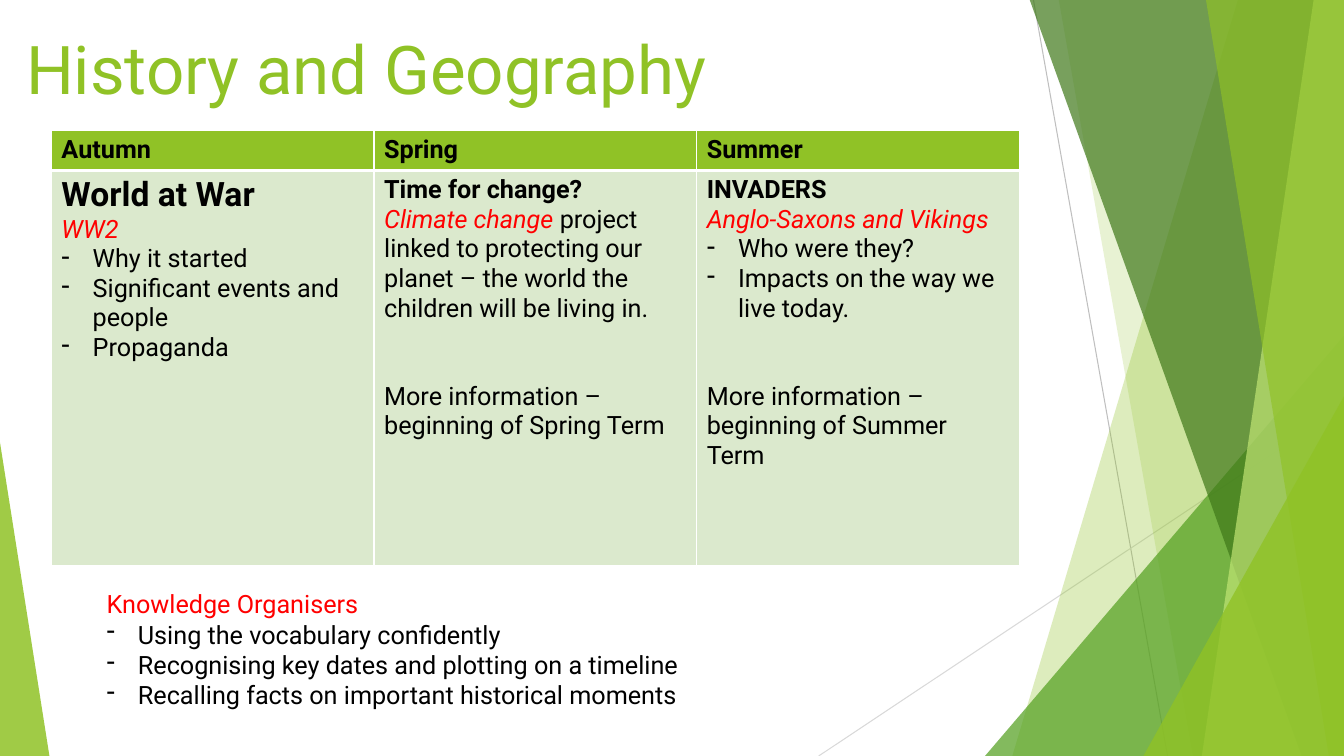
from lxml import etree
from pptx import Presentation
from pptx.dml.color import RGBColor
from pptx.enum.shapes import MSO_CONNECTOR as Connector, MSO_SHAPE as Preset
from pptx.oxml import parse_xml
from pptx.oxml.ns import nsdecls, qn
from pptx.util import Inches, Pt

GREEN = RGBColor(0x90, 0xC2, 0x26)
LEAF = RGBColor(0x54, 0xA0, 0x21)
FOREST = RGBColor(0x3F, 0x78, 0x19)
LIME = RGBColor(0xC0, 0xE4, 0x74)
PALE = RGBColor(0xDB, 0xE9, 0xCD)
GREY = RGBColor(0xBF, 0xBF, 0xBF)
LIGHT_GREY = RGBColor(0xD9, 0xD9, 0xD9)
RED = RGBColor(0xFF, 0x00, 0x00)
BLACK = RGBColor(0x00, 0x00, 0x00)
WIDTH, HEIGHT, TOP = 13.33, 7.5, -0.01


def add_text(frame, text, size=18, color=BLACK, bold=False, italic=False,
             dash=False, before=0, same_line=False):
    """Add a run of text, in a new paragraph unless same_line is set."""
    paragraph = frame.paragraphs[-1]
    if paragraph.runs and not same_line:
        paragraph = frame.add_paragraph()
    if before:
        paragraph.space_before = Pt(before)
    if dash:
        properties = paragraph._p.get_or_add_pPr()
        properties.set("marL", str(Inches(0.31)))
        properties.set("indent", str(-Inches(0.31)))
        etree.SubElement(properties, qn("a:buChar")).set("char", "-")
    run = paragraph.add_run()
    run.text = text
    font = run.font
    font.name, font.size, font.bold, font.italic = "Roboto", Pt(size), bold, italic
    font.color.rgb = color


def add_text_box(left, top, width, height):
    frame = slide.shapes.add_textbox(
        Inches(left), Inches(top), Inches(width), Inches(height)).text_frame
    frame.word_wrap = True
    return frame


presentation = Presentation()
presentation.slide_width, presentation.slide_height = Inches(WIDTH), Inches(HEIGHT)
slide = presentation.slides.add_slide(presentation.slide_layouts[6])

# Thin lines behind the facets
for start_x, start_y, end_x, color in [(10.25, 0, 11.58, GREY),
                                       (WIDTH, 4.03, 8.12, LIGHT_GREY)]:
    line = slide.shapes.add_connector(
        Connector.STRAIGHT, Inches(start_x), Inches(start_y), Inches(end_x), Inches(HEIGHT))
    line.line.color.rgb = color
    line.line.width = Pt(0.75)
    etree.SubElement(line._element.spPr, qn("a:effectLst"))

# Facets: ("band", top x, bottom x) reaches the right edge;
# ("triangle", left, top, width, apex) stands on the bottom edge
facets = [
    (("band", 12.28, 10.04), GREEN, 30),
    (("band", 10.5, 11.83), GREEN, 20),
    (("triangle", 9.77, 3.33, 3.56, 1), LEAF, 72),
    (("band", 10.21, 12.91), FOREST, 70),
    (("band", 13.03, 11.92), LIME, 70),
    (("band", 11.96, 13.18), GREEN, 65),
    (("triangle", 11.34, 3.93, 1.99, 1), GREEN, 80),
    (("triangle", 0, 4.39, 0.49, 0), GREEN, 85),
]
for (kind, *geometry), color, opacity in facets:
    if kind == "band":
        top_x, bottom_x = geometry
        builder = slide.shapes.build_freeform(Inches(top_x), Inches(TOP))
        corners = [(WIDTH, TOP), (WIDTH, HEIGHT), (bottom_x, HEIGHT)]
        builder.add_line_segments([(Inches(x), Inches(y)) for x, y in corners])
        shape = builder.convert_to_shape()
    else:
        left, top, width, apex = geometry
        shape = slide.shapes.add_shape(
            Preset.ISOSCELES_TRIANGLE, Inches(left), Inches(top),
            Inches(width), Inches(HEIGHT - top))
        shape.adjustments[0] = apex
    shape.shadow.inherit = False
    shape.line.fill.background()
    shape.fill.solid()
    shape.fill.fore_color.rgb = color
    color_element = shape._element.spPr.find(qn("a:solidFill"))[0]
    etree.SubElement(color_element, qn("a:alpha")).set("val", str(opacity * 1000))

# Title
add_text(add_text_box(0.16, 0.22, 9.4, 1.44), "History and Geography", size=48, color=GREEN)

# Term table: each entry is a text and its format
topic = dict(color=RED, italic=True)
point = dict(dash=True)
terms = {
    "Autumn": [
        ("World at War", dict(size=24, bold=True)),
        ("WW2", topic),
        ("Why it started", point),
        ("Significant events and people", point),
        ("Propaganda", point),
    ],
    "Spring": [
        ("Time for change?", dict(bold=True)),
        ("Climate change ", topic),
        ("project linked to protecting our planet – the world the children "
         "will be living in.", dict(same_line=True)),
        ("More information – beginning of Spring Term", dict(before=42)),
    ],
    "Summer": [
        ("INVADERS", dict(bold=True)),
        ("Anglo-Saxons and Vikings", topic),
        ("Who were they?", point),
        ("Impacts on the way we live today.", point),
        ("More information – beginning of Summer Term", dict(before=42)),
    ],
}
table = slide.shapes.add_table(
    2, len(terms), Inches(0.51), Inches(1.29), Inches(9.6), Inches(4.3)).table
table.rows[0].height, table.rows[1].height = Inches(0.38), Inches(3.92)
for column, (term, entries) in enumerate(terms.items()):
    table.columns[column].width = Inches(3.2)
    header, body = table.cell(0, column), table.cell(1, column)
    add_text(header.text_frame, term, bold=True)
    for text, style in entries:
        add_text(body.text_frame, text, **style)
    for cell, fill, thick_side in [(header, GREEN, "lnB"), (body, PALE, "lnT")]:
        properties = cell._tc.get_or_add_tcPr()
        for side in ("lnL", "lnR", "lnT", "lnB"):
            width = Pt(3 if side == thick_side else 1)
            properties.append(parse_xml(
                f'<a:{side} {nsdecls("a")} w="{width}"><a:solidFill>'
                f'<a:srgbClr val="FFFFFF"/></a:solidFill></a:{side}>'))
        cell.fill.solid()
        cell.fill.fore_color.rgb = fill

# Knowledge organisers
organisers = add_text_box(0.96, 5.79, 8.04, 1.31)
add_text(organisers, "Knowledge Organisers", color=RED)
for skill in ["Using the vocabulary confidently",
              "Recognising key dates and plotting on a timeline",
              "Recalling facts on important historical moments"]:
    add_text(organisers, skill, dash=True)

presentation.save("out.pptx")
